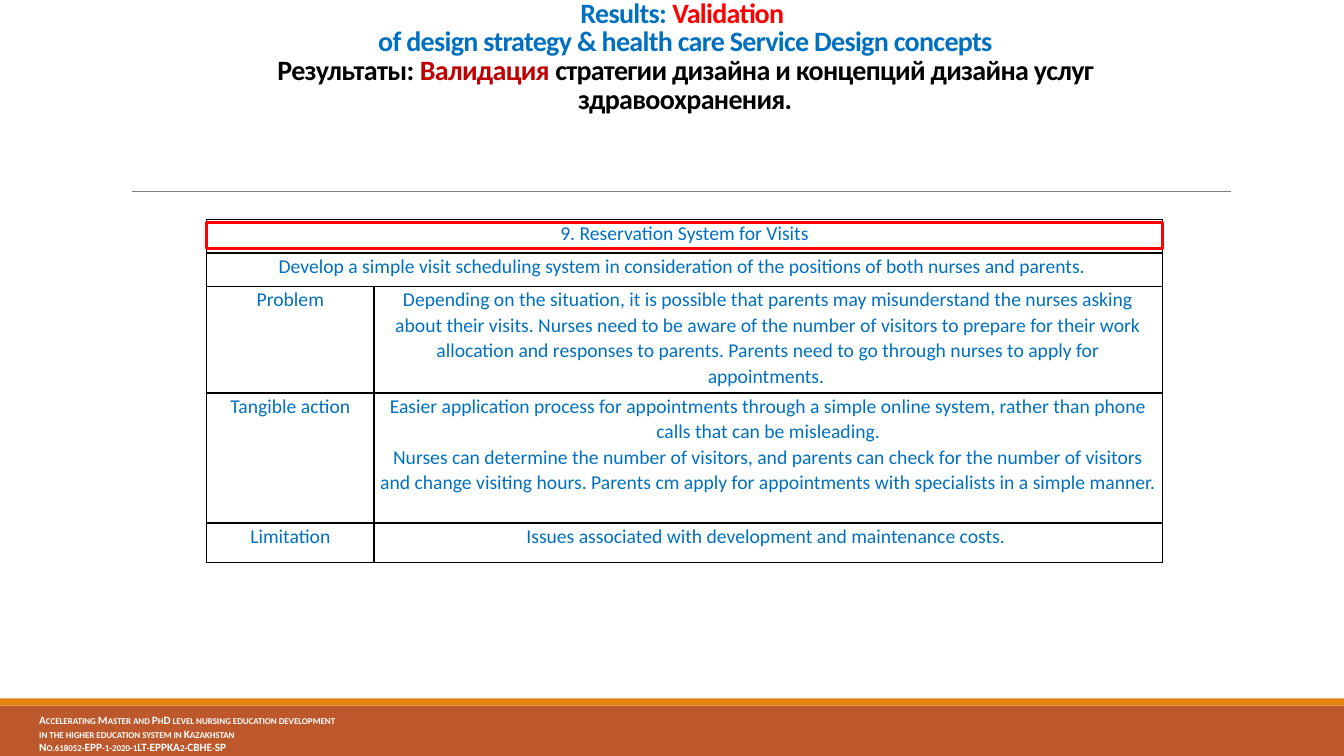
"""Build the slide on validating the visit reservation concept."""
from lxml import etree
from pptx import Presentation
from pptx.dml.color import RGBColor
from pptx.enum import shapes, text
from pptx.oxml import ns
from pptx.util import Inches, Pt

HUES = {"rust": "BD582C", "amber": "E48312", "gray": "808080", "white": "FFFFFF",
        "blue": "0070C0", "red": "FF0000", "wine": "C00000", "black": "000000"}


def hue(name):
    return RGBColor.from_string(HUES[name])


def style(para, size, color, bold=False):
    font = para.font
    font.name, font.size, font.bold = "Calibri", Pt(size), bold
    if color:
        font.color.rgb = hue(color)


deck = Presentation()
deck.slide_width, deck.slide_height = Inches(13.33), Inches(7.5)
slide = deck.slides.add_slide(deck.slide_layouts[5])
items = slide.shapes

for top, high, color in [(7, 0.5, "rust"), (6.93, 0.07, "amber")]:
    band = items.add_shape(shapes.MSO_SHAPE.RECTANGLE, 0, Inches(top),
                           deck.slide_width, Inches(high))
    band.shadow.inherit = False
    band.fill.solid()
    band.fill.fore_color.rgb = hue(color)
    band.line.fill.background()

rule = items.add_connector(shapes.MSO_CONNECTOR.STRAIGHT, Inches(1.31), Inches(1.9),
                           Inches(12.21), Inches(1.9))
rule.line.color.rgb = hue("gray")
rule.line.width = Pt(0.5)
etree.SubElement(rule._element.spPr, ns.qn("a:effectLst"))

foot = items.add_textbox(Inches(0.29), Inches(7.03), Inches(4.59), Inches(0.47)).text_frame
foot.word_wrap = True
foot.text = "\n".join([
    "Accelerating Master and PhD level nursing education development",
    "in the higher education system in Kazakhstan",
    "No.618052-EPP-1-2020-1LT-EPPKA2-CBHE-SP"])
for para in foot.paragraphs:
    style(para, 8, "white", True)
    para.runs[0].font._element.set("cap", "small")

title = items.title
title.left, title.top, title.width, title.height = map(Inches, (1.87, 0.08, 9.85, 1.11))
frame = title.text_frame
frame.word_wrap = True
frame.auto_size = text.MSO_AUTO_SIZE.NONE
frame.vertical_anchor = text.MSO_ANCHOR.BOTTOM
head = frame.paragraphs[0]
head.alignment = text.PP_ALIGN.CENTER
head.line_spacing = 0.85
style(head, 20, None, True)
lines = [
    [("Results: ", "blue"), ("Validation ", "red")],
    [("of design strategy & health care Service Design concepts", "blue")],
    [("Результаты: ", "black"), ("Валидация", "wine"),
     (" стратегии дизайна и концепций дизайна услуг здравоохранения.", "black")]]
for row, line in enumerate(lines):
    if row:
        head.add_line_break()
    for words, color in line:
        run = head.add_run()
        run.text = words
        run.font.color.rgb = hue(color)
        run.font._element.set("spc", "-50")
for brk in head._p.findall(ns.qn("a:br")):
    etree.SubElement(brk, ns.qn("a:rPr"), sz="2000", b="1")

rows = [
    ("9. Reservation System for Visits",),
    ("Develop a simple visit scheduling system in consideration of the positions "
     "of both nurses and parents. ",),
    ("Problem",
     "Depending on the situation, it is possible that parents may misunderstand the nurses "
     "asking about their visits. Nurses need to be aware of the number of visitors to prepare "
     "for their work allocation and responses to parents. Parents need to go through nurses "
     "to apply for appointments. "),
    ("Tangible action",
     "Easier application process for appointments through a simple online system, rather than "
     "phone calls that can be misleading.\n"
     "Nurses can determine the number of visitors, and parents can check for the number of "
     "visitors and change visiting hours. Parents cm apply for appointments with specialists "
     "in a simple manner. "),
    ("Limitation", "Issues associated with development and maintenance costs. ")]
grid = items.add_table(len(rows), 2, Inches(2.05), Inches(2.18),
                       Inches(9.48), Inches(3.4)).table
grid.first_row = grid.horz_banding = False
for col, wide in zip(grid.columns, (1.66, 7.82)):
    col.width = Inches(wide)
for row, high in zip(grid.rows, (0.33, 0.33, 1.06, 1.29, 0.39)):
    row.height = Inches(high)
for row, words in enumerate(rows):
    if len(words) == 1:
        grid.cell(row, 0).merge(grid.cell(row, 1))
    for col, body in enumerate(words):
        cell = grid.cell(row, col)
        cell.text = body
        for para in cell.text_frame.paragraphs:
            para.alignment = text.PP_ALIGN.CENTER
            para.line_spacing = 1.07
            style(para, 14, "blue")
for cell in grid.iter_cells():
    cell.margin_left = cell.margin_right = Inches(0.06)
    cell.margin_top = cell.margin_bottom = 0
    props = cell._tc.get_or_add_tcPr()
    for side in ("lnL", "lnR", "lnT", "lnB"):
        edge = etree.SubElement(props, ns.qn(f"a:{side}"), w=str(Pt(1)))
        fill = etree.SubElement(edge, ns.qn("a:solidFill"))
        etree.SubElement(fill, ns.qn("a:srgbClr"), val=HUES["black"])
    cell.fill.background()

frame = items.add_shape(shapes.MSO_SHAPE.RECTANGLE, Inches(2.05), Inches(2.21),
                        Inches(9.48), Inches(0.26))
frame.shadow.inherit = False
frame.fill.background()
frame.line.color.rgb = hue("red")
frame.line.width = Pt(2.25)

deck.save("out.pptx")
